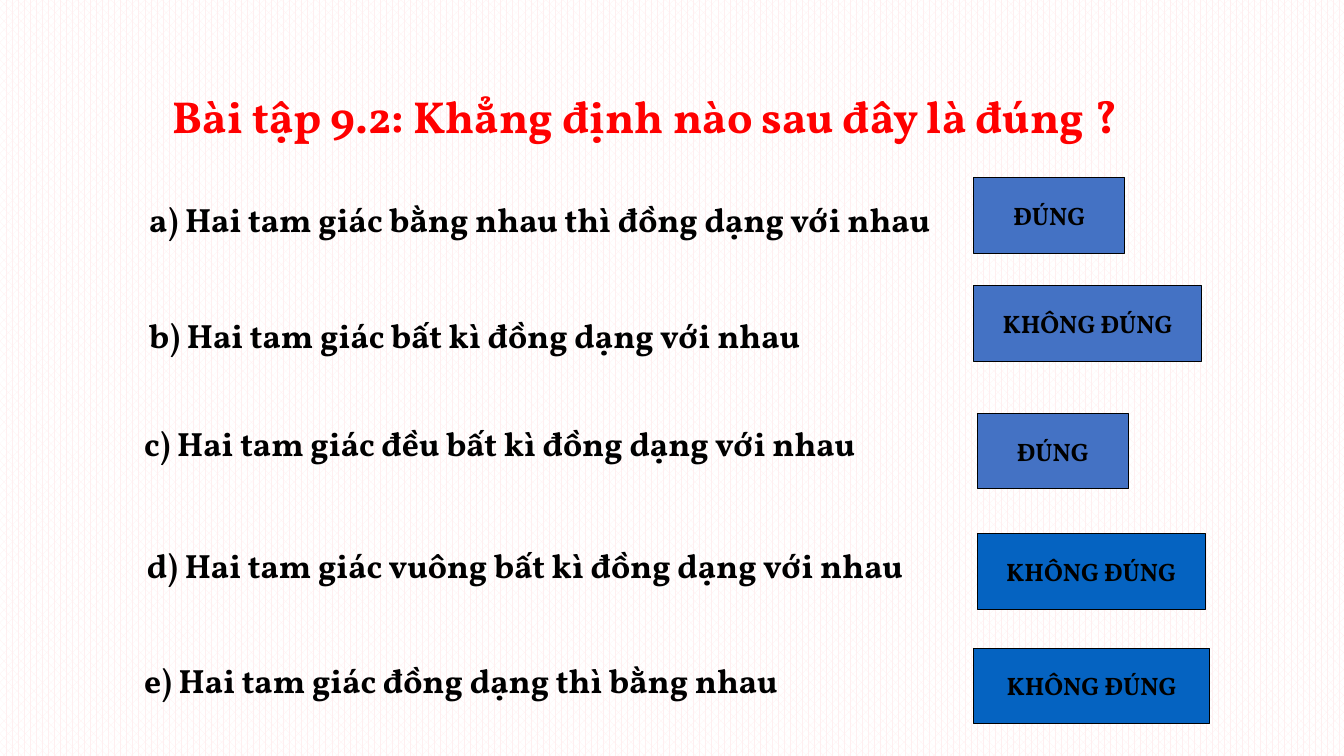
import pptx
import pptx.dml.color
import pptx.enum.dml
import pptx.enum.shapes
import pptx.enum.text
import pptx.oxml.ns
import pptx.util
from lxml import etree

Cm = pptx.util.Cm
Pt = pptx.util.Pt
RGBColor = pptx.dml.color.RGBColor

RED = RGBColor(0xFF, 0x00, 0x00)
BLACK = RGBColor(0x00, 0x00, 0x00)
WHITE = RGBColor(0xFF, 0xFF, 0xFF)
PINK = RGBColor(0xFF, 0xEF, 0xF0)
BLUE = RGBColor(0x44, 0x72, 0xC4)
DEEP_BLUE = RGBColor(0x05, 0x63, 0xC1)

TRUE, FALSE = "ĐÚNG", "KHÔNG ĐÚNG"

# Statement, its left and top, then the answer, its left, top, width and fill (cm)
EXERCISES = [
    ("a) Hai tam giác bằng nhau thì đồng dạng với nhau", 3.51, 4.9,
     TRUE, 24.54, 4.47, 3.81, BLUE),
    ("b) Hai tam giác bất kì đồng dạng với nhau", 3.51, 7.82,
     FALSE, 24.54, 7.19, 5.74, BLUE),
    ("c) Hai tam giác đều bất kì đồng dạng với nhau", 3.38, 10.54,
     TRUE, 24.63, 10.41, 3.81, BLUE),
    ("d) Hai tam giác vuông bất kì đồng dạng với nhau", 3.45, 13.61,
     FALSE, 24.63, 13.44, 5.74, DEEP_BLUE),
    ("e) Hai tam giác đồng dạng thì bằng nhau", 3.38, 16.51,
     FALSE, 24.54, 16.33, 5.94, DEEP_BLUE),
]


class QuizPage:
    font_name = "Vollkorn"
    answer_height = 1.91

    def __init__(self, deck):
        self.page = deck.slides.add_slide(deck.slide_layouts[6])

    def background(self, fore, back):
        fill = self.page.background.fill
        fill.patterned()
        fill.pattern = pptx.enum.dml.MSO_PATTERN.PERCENT_60
        fill.fore_color.rgb = fore
        fill.back_color.rgb = back

    def add_span(self, box, text, size, color):
        para = box.text_frame.paragraphs[0]
        span = para.add_run()
        span.text = text
        formats = {"name": self.font_name, "size": Pt(size), "bold": True}
        for name, value in formats.items():
            setattr(span.font, name, value)
        span.font.color.rgb = color
        return para

    def text(self, text, left, top, width, height, size, color):
        box = self.page.shapes.add_textbox(Cm(left), Cm(top), Cm(width), Cm(height))
        box.text_frame.word_wrap = True
        box.text_frame.auto_size = pptx.enum.text.MSO_AUTO_SIZE.SHAPE_TO_FIT_TEXT
        para = self.add_span(box, text, size, color)
        # Space before is half a line
        qn = pptx.oxml.ns.qn
        before = etree.SubElement(para._p.get_or_add_pPr(), qn("a:spcBef"))
        etree.SubElement(before, qn("a:spcPct"), val="50000")

    def answer(self, text, left, top, width, color):
        box = self.page.shapes.add_shape(
            pptx.enum.shapes.MSO_SHAPE.RECTANGLE,
            Cm(left), Cm(top), Cm(width), Cm(self.answer_height))
        box.shadow.inherit = False
        box.fill.solid()
        box.fill.fore_color.rgb = color
        box.line.color.rgb = BLACK
        box.line.width = Pt(0.75)
        formats = {"word_wrap": False,
                   "vertical_anchor": pptx.enum.text.MSO_ANCHOR.MIDDLE}
        for name, value in formats.items():
            setattr(box.text_frame, name, value)
        para = self.add_span(box, text, 18, BLACK)
        para.alignment = pptx.enum.text.PP_ALIGN.CENTER


def main():
    deck = pptx.Presentation()
    deck.slide_width, deck.slide_height = Cm(33.87), Cm(19.05)
    quiz = QuizPage(deck)
    quiz.background(PINK, WHITE)

    # Title
    quiz.text("Bài tập 9.2: Khẳng định nào sau đây là đúng ?",
              4.11, 2.11, 26.19, 1.63, 32, RED)

    # Statements with their answers
    for statement, left, top, verdict, *answer_place in EXERCISES:
        quiz.text(statement, left, top, 23.06, 1.27, 24, BLACK)
        quiz.answer(verdict, *answer_place)

    deck.save("out.pptx")


if __name__ == "__main__":
    main()
